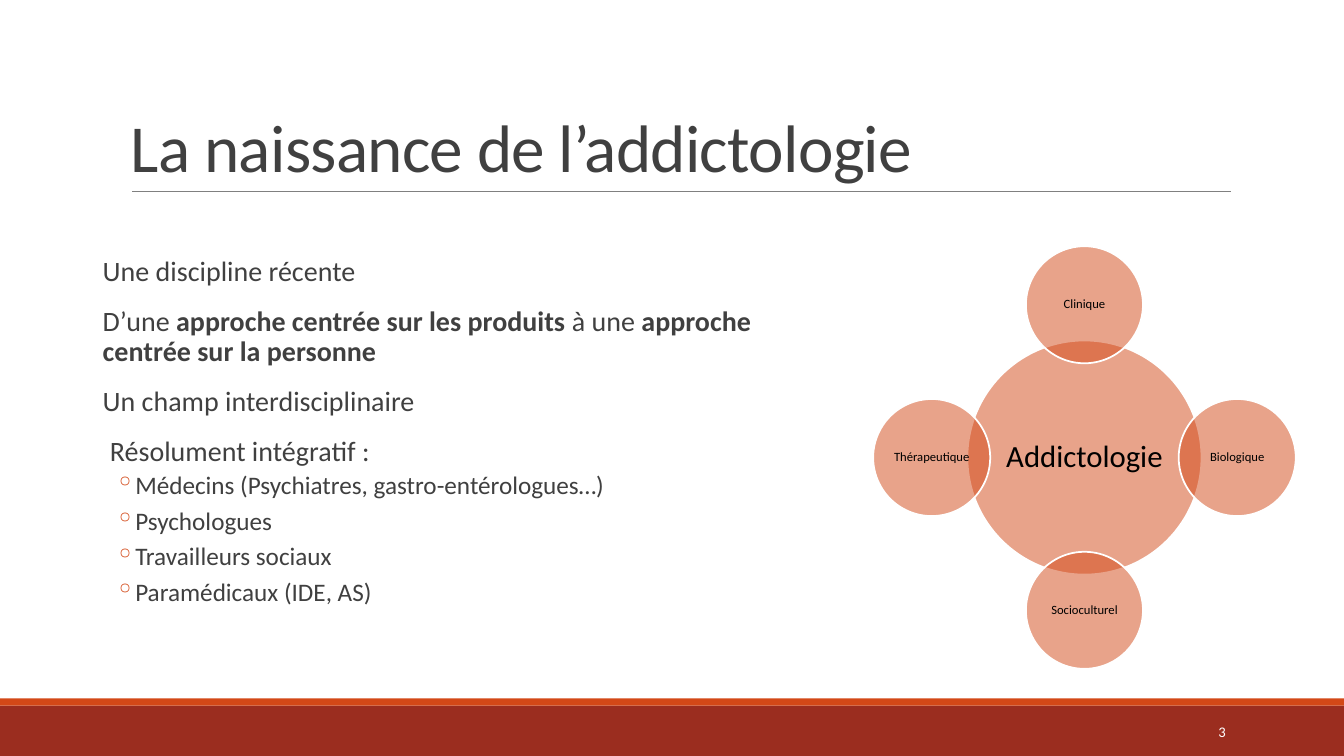
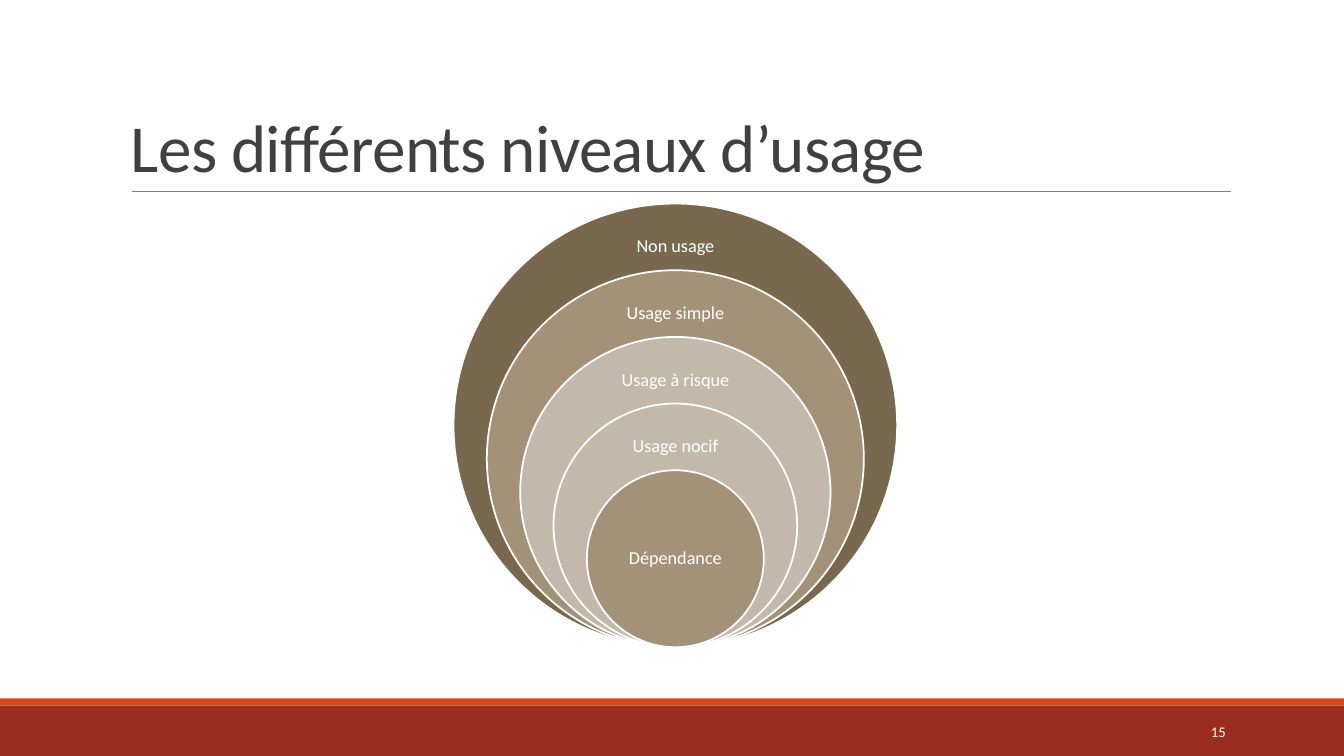
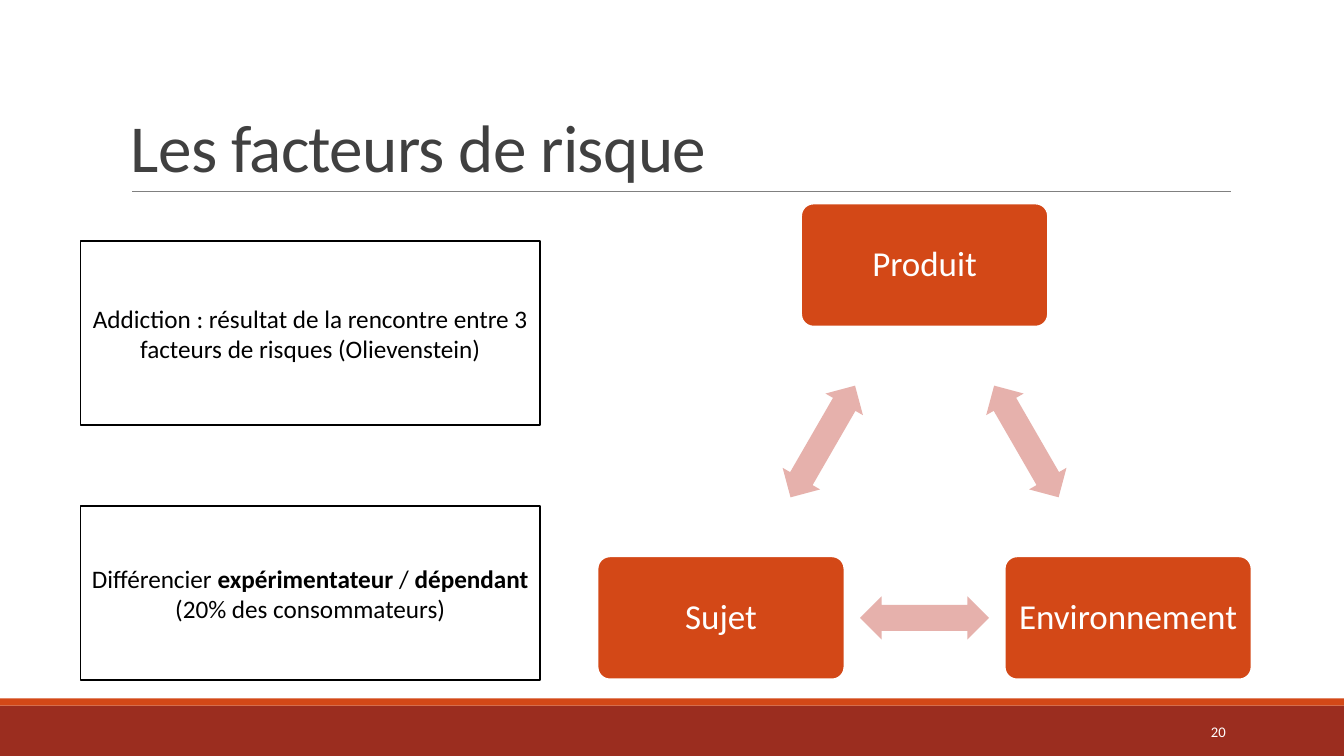
import lxml.etree
import pptx
import pptx.dml.color
import pptx.enum.shapes
import pptx.enum.text
import pptx.oxml.ns
import pptx.util

Cm = pptx.util.Cm
Pt = pptx.util.Pt
rgb = pptx.dml.color.RGBColor.from_string
qn = pptx.oxml.ns.qn
Shape = pptx.enum.shapes.MSO_SHAPE
Align = pptx.enum.text.PP_ALIGN
Anchor = pptx.enum.text.MSO_ANCHOR

ORANGE = "D34817"
BRICK = "9B2D1F"
PINK = "E6B1AC"
DARK = "404040"
GREY = "808080"
WHITE = "FFFFFF"
BLACK = "000000"


def draw(slide, kind, left, top, width, height, fill, line=None):
    shape = slide.shapes.add_shape(kind, Cm(left), Cm(top), Cm(width), Cm(height))
    shape.shadow.inherit = False
    shape.fill.solid()
    shape.fill.fore_color.rgb = rgb(fill)
    if line:
        shape.line.color.rgb = rgb(line)
        shape.line.width = Pt(1.25)
    else:
        shape.line.fill.background()
    return shape


def write(shape, texts, size, color, align=Align.CENTER, anchor=Anchor.MIDDLE,
          margins=(0.25, 0.13), spacing=0.9):
    frame = shape.text_frame
    frame.word_wrap = True
    frame.vertical_anchor = anchor
    frame.margin_left = frame.margin_right = Cm(margins[0])
    frame.margin_top = frame.margin_bottom = Cm(margins[1])
    for index, text in enumerate(texts):
        paragraph = frame.add_paragraph() if index else frame.paragraphs[0]
        paragraph.alignment = align
        paragraph.line_spacing = spacing
        paragraph.font.name = "Calibri"
        paragraph.font.size = Pt(size)
        paragraph.font.color.rgb = rgb(color)
        for position, part in enumerate(text.split("**")):
            if part:
                run = paragraph.add_run()
                run.text = part
                if position % 2:
                    run.font.bold = True
    return frame.paragraphs


presentation = pptx.Presentation()
presentation.slide_width = Cm(33.87)
presentation.slide_height = Cm(19.05)

pages = [
    ("La naissance de l’addictologie", "3"),
    ("Les différents niveaux d’usage", "15"),
    ("Les facteurs de risque", "20"),
]
for title, number in pages:
    slide = presentation.slides.add_slide(presentation.slide_layouts[6])
    draw(slide, Shape.RECTANGLE, 0, 17.78, 33.87, 1.27, BRICK)
    draw(slide, Shape.RECTANGLE, 0, 17.6, 33.87, 0.18, ORANGE)
    rule = slide.shapes.add_connector(
        pptx.enum.shapes.MSO_CONNECTOR.STRAIGHT, Cm(3.33), Cm(4.83), Cm(31.01), Cm(4.83))
    rule.line.color.rgb = rgb(GREY)
    rule.line.width = Pt(0.5)
    lxml.etree.SubElement(rule._element.spPr, qn("a:effectLst"))
    title_box = slide.shapes.add_textbox(Cm(3.05), Cm(0.79), Cm(27.94), Cm(4.04))
    heading = write(title_box, [title], 48, DARK, Align.LEFT, Anchor.BOTTOM, spacing=0.85)[0]
    heading._p.pPr.find(qn("a:defRPr")).set("spc", "-50")
    number_box = slide.shapes.add_textbox(Cm(27.51), Cm(17.93), Cm(3.63), Cm(1.02))
    write(number_box, [number], 10.5, WHITE, Align.RIGHT, spacing=1)

birth, levels, factors = presentation.slides

statements = [
    "Une discipline récente",
    "D’une **approche centrée sur les produits** à une **approche centrée sur la personne**",
    "Un champ interdisciplinaire",
    "Résolument intégratif :",
]
professions = [
    "Médecins (Psychiatres, gastro-entérologues…)",
    "Psychologues",
    "Travailleurs sociaux",
    "Paramédicaux (IDE, AS)",
]
body = birth.shapes.add_textbox(Cm(2.34), Cm(6.35), Cm(17.88), Cm(10.69))
paragraphs = write(body, statements + professions, 20, DARK, Align.LEFT, Anchor.TOP, (0, 0.13))
for paragraph in paragraphs[:len(statements)]:
    paragraph.space_before = Pt(12)
    paragraph.space_after = Pt(2)
    paragraph._p.pPr.set("marL", str(Cm(0.25)))
paragraphs[len(statements) - 1]._p.pPr.set("marL", str(Cm(0.43)))
for paragraph in paragraphs[len(statements):]:
    paragraph.font.size = Pt(18)
    paragraph.space_before = Pt(2)
    paragraph.space_after = Pt(4)
    properties = paragraph._p.pPr
    properties.set("marL", str(Cm(1.07)))
    properties.set("indent", str(Cm(-0.51)))
    bullet_color = lxml.etree.Element(qn("a:buClr"))
    lxml.etree.SubElement(bullet_color, qn("a:srgbClr"), val=ORANGE)
    bullet = lxml.etree.Element(qn("a:buChar"), char="◦")
    defaults = properties.find(qn("a:defRPr"))
    defaults.addprevious(bullet_color)
    defaults.addprevious(bullet)

hub_x, hub_y, reach = 27.33, 11.53, 3.85
circles = [
    ("Addictologie", 0, 0, 5.9, 22),
    ("Clinique", 0, -1, 2.95, 9),
    ("Biologique", 1, 0, 2.95, 9),
    ("Socioculturel", 0, 1, 2.95, 9),
    ("Thérapeutique", -1, 0, 2.95, 9),
]
for label, across, down, diameter, size in circles:
    left = hub_x + across * reach - diameter / 2
    top = hub_y + down * reach - diameter / 2
    circle = draw(birth, Shape.OVAL, left, top, diameter, diameter, ORANGE, WHITE)
    fill_color = circle._element.spPr.find(qn("a:solidFill")).find(qn("a:srgbClr"))
    lxml.etree.SubElement(fill_color, qn("a:alpha"), val="50000")
    write(circle, [label], size, BLACK, margins=(0.03, 0.03))

usages = [
    ("Non usage", "78694E"),
    ("Usage simple", "A39277"),
    ("Usage à risque", "C3B9AA"),
    ("Usage nocif", "C3B9AA"),
    ("Dépendance", "A39277"),
]
center_x, bottom, label_width = 17.02, 16.31, 4.2
for index, (label, color) in enumerate(usages):
    diameter = 11.18 - 1.68 * index
    top = bottom - diameter
    target = draw(levels, Shape.OVAL, center_x - diameter / 2, top, diameter, diameter, color, WHITE)
    if index < len(usages) - 1:
        target = levels.shapes.add_textbox(
            Cm(center_x - label_width / 2), Cm(top + 0.54), Cm(label_width), Cm(1.1))
    write(target, [label], 13, WHITE)

node_width, node_height = 6.22, 3.1
arrow_width, arrow_height = 3.25, 1.09
nodes = [("Produit", 23.3, 6.68), ("Environnement", 28.43, 15.57), ("Sujet", 18.17, 15.57)]
for index, (label, x, y) in enumerate(nodes):
    node = draw(factors, Shape.ROUNDED_RECTANGLE, x - node_width / 2, y - node_height / 2,
                node_width, node_height, ORANGE, WHITE)
    node.adjustments[0] = 0.1
    write(node, [label], 25, WHITE, margins=(0.2, 0.2))
    next_label, next_x, next_y = nodes[(index + 1) % len(nodes)]
    arrow = draw(factors, Shape.LEFT_RIGHT_ARROW, (x + next_x - arrow_width) / 2,
                 (y + next_y - arrow_height) / 2, arrow_width, arrow_height, PINK)
    arrow.adjustments[0] = 0.6
    arrow.adjustments[1] = 0.5
    arrow.rotation = 60 + 120 * index

notes = [
    (6.07, 4.65, ["Addiction : résultat de la rencontre entre 3 facteurs de risques (Olievenstein)"]),
    (12.75, 4.39, ["Différencier **expérimentateur** / **dépendant**", "(20% des consommateurs)"]),
]
for top, height, texts in notes:
    note = draw(factors, Shape.RECTANGLE, 2.03, top, 11.58, height, WHITE, BLACK)
    write(note, texts, 18, BLACK, spacing=1)

presentation.save("out.pptx")
